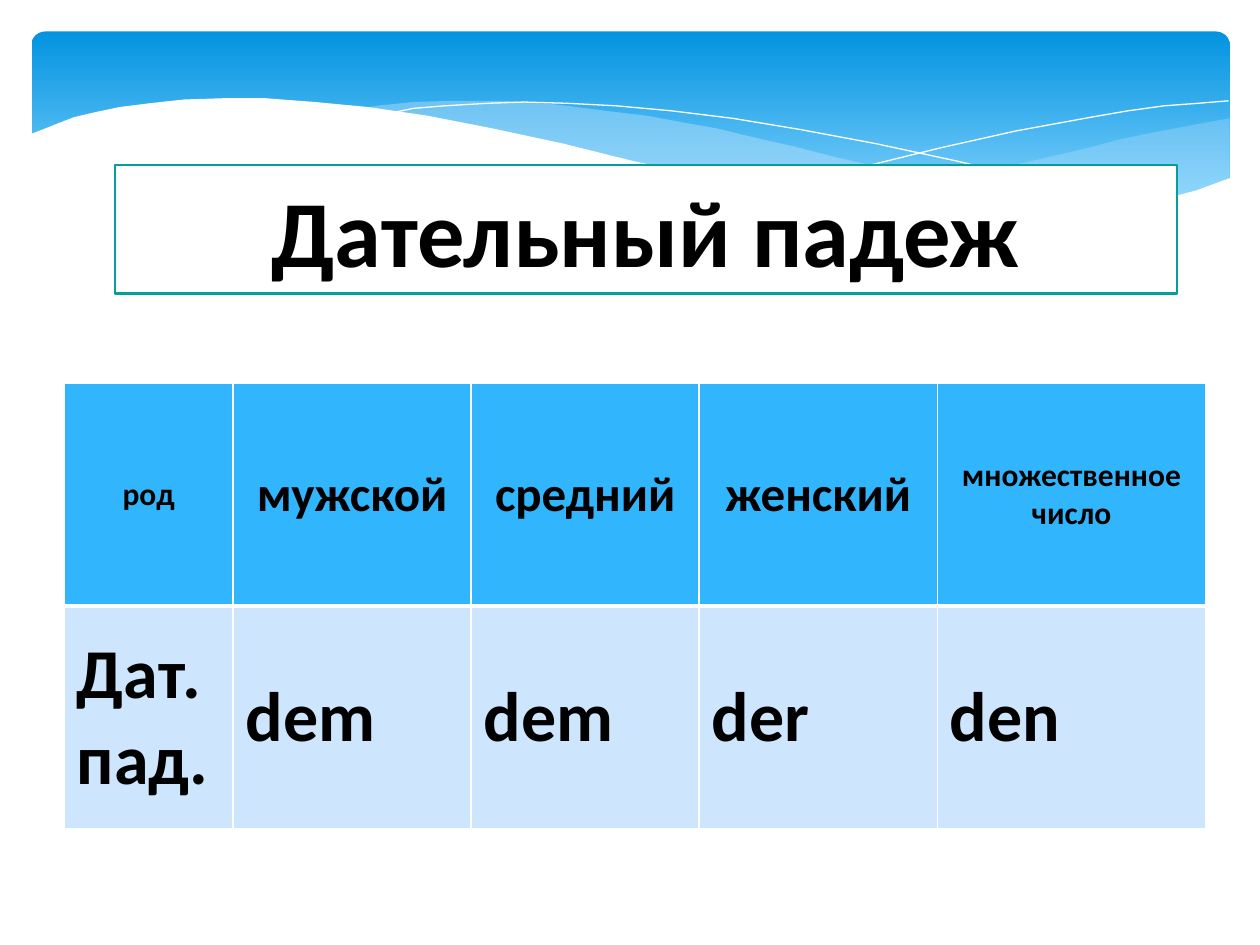
from lxml import etree
from pptx import Presentation
from pptx.dml.color import RGBColor
from pptx.enum.shapes import MSO_SHAPE
from pptx.enum.text import MSO_ANCHOR, PP_ALIGN
from pptx.oxml.ns import qn
from pptx.util import Pt

PX = 9144  # 100 px to the inch
FONT = "Calibri"
ROUND = MSO_SHAPE.ROUNDED_RECTANGLE
MIDDLE = MSO_ANCHOR.MIDDLE
LEFT, CENTER = PP_ALIGN.LEFT, PP_ALIGN.CENTER

WHITE = RGBColor(0xFF, 0xFF, 0xFF)
BLACK = RGBColor(0, 0, 0)
DEEP = RGBColor(0x02, 0x93, 0xE0)
SKY = RGBColor(0x83, 0xD3, 0xFE)
MIST = RGBColor(0xC6, 0xE7, 0xFC)
TEAL = RGBColor(0x04, 0x9E, 0x9B)
BLUE = RGBColor(0x31, 0xB6, 0xFD)
PALE = RGBColor(0xCE, 0xE5, 0xFE)

# Content
TITLE = "Дательный падеж"
HEAD = [("род", 18), ("мужской", 28), ("средний", 28), ("женский", 28),
        ("множественное число", 18)]
BODY = [(word, 40) for word in ("Дат. пад.", "dem", "dem", "der", "den")]
COLS = [134, 189, 181, 189, 213]
ROW = 177

# Waves: points, fill, opacity in percent; without a fill it is an open line
WAVES = [
    ([(975, 94), (948, 99), (921, 104), (891, 110), (861, 118), (805, 131),
      (753, 143), (706, 152), (661, 160), (691, 164), (719, 167), (745, 169),
      (769, 171), (792, 172), (824, 172), (844, 171), (863, 170), (881, 167),
      (897, 165), (913, 162), (928, 158), (942, 154), (963, 147), (976, 141),
      (976, 94)], MIST, 29),
    ([(893, 167), (866, 164), (807, 154), (741, 142), (668, 126), (629, 116),
      (598, 109), (569, 102), (541, 97), (514, 92), (489, 89), (442, 83),
      (399, 80), (361, 80), (328, 81), (299, 84), (286, 86), (323, 90),
      (362, 97), (404, 106), (449, 116), (530, 135), (584, 146), (618, 153),
      (650, 158), (680, 163), (709, 166), (736, 169), (773, 172), (807, 173),
      (838, 172), (867, 170)], MIST, 40),
    ([(309, 90), (328, 86), (353, 84), (387, 82), (416, 81), (450, 82),
      (489, 84), (533, 88), (582, 94), (636, 103), (695, 114), (760, 128),
      (831, 145), (869, 155), (907, 166)], None, 100),
    ([(613, 151), (653, 141), (695, 130), (748, 117), (806, 104), (866, 93),
      (895, 88), (924, 84), (951, 82), (975, 80)], None, 100),
    ([(977, 141), (950, 151), (920, 159), (887, 166), (850, 170), (809, 171),
      (761, 170), (726, 167), (688, 162), (648, 156), (603, 149), (555, 139),
      (503, 128), (447, 114), (391, 102), (340, 92), (292, 85), (250, 81),
      (211, 78), (177, 78), (146, 79), (119, 82), (95, 85), (76, 89),
      (59, 93), (46, 98), (36, 102), (23, 107), (23, 224), (977, 224)],
     WHITE, 100),
]


def style(para, size, align):
    para.alignment = align
    for run in para.runs:
        font = run.font
        font.name, font.size, font.bold = FONT, Pt(size), True
        font.color.rgb = BLACK


def wave(shapes, points, color, alpha):
    pen = shapes.build_freeform(*points[0], scale=PX)
    pen.add_line_segments(points[1:], close=color is not None)
    shape = pen.convert_to_shape()
    shape.shadow.inherit = False
    if color is None:
        shape.fill.background()
        shape.line.color.rgb = WHITE
        shape.line.width = 0
        return
    shape.fill.solid()
    shape.fill.fore_color.rgb = color
    shape.line.fill.background()
    if alpha < 100:
        tone = next(shape.fill._xPr.iter(qn("a:srgbClr")))
        etree.SubElement(tone, qn("a:alpha"), val=str(alpha * 1000))


def border(cell, widths):
    props = cell._tc.get_or_add_tcPr()
    for spot, (side, width) in enumerate(zip("LRTB", widths)):
        line = etree.Element(qn("a:ln" + side), w=str(Pt(width)))
        fill = etree.SubElement(line, qn("a:solidFill"))
        etree.SubElement(fill, qn("a:srgbClr"), val=str(WHITE))
        props.insert(spot, line)


def main():
    deck = Presentation()
    deck.slide_width, deck.slide_height = 1000 * PX, 750 * PX
    slide = deck.slides.add_slide(deck.slide_layouts[5])
    shapes = slide.shapes

    # Banner
    band = shapes.add_shape(ROUND, 25 * PX, 25 * PX, 951 * PX, 156 * PX)
    band.adjustments[0] = 0.07
    band.shadow.inherit = False
    band.line.fill.background()
    band.fill.gradient()
    band.fill.gradient_angle = 270
    for stop, color, place in zip(band.fill.gradient_stops, (DEEP, SKY), (0, 0.9)):
        stop.color.rgb, stop.position = color, place
    for points, color, alpha in WAVES:
        wave(shapes, points, color, alpha)

    # Title, brought in front of the banner
    title = shapes.title
    title._element.getparent().append(title._element)
    title.left, title.top = 91 * PX, 131 * PX
    title.width, title.height = 843 * PX, 102 * PX
    title.fill.solid()
    title.fill.fore_color.rgb = WHITE
    title.line.color.rgb = TEAL
    title.line.width = Pt(1.25)
    title.text_frame.text = TITLE
    title.text_frame.vertical_anchor = MIDDLE
    style(title.text_frame.paragraphs[0], 54, CENTER)

    # Table
    rows = [(HEAD, BLUE, CENTER, (1, 1, 1, 3)), (BODY, PALE, LEFT, (1, 1, 3, 1))]
    table = shapes.add_table(len(rows), len(COLS), 51 * PX, 304 * PX,
                             sum(COLS) * PX, len(rows) * ROW * PX).table
    for col, width in zip(table.columns, COLS):
        col.width = width * PX
    for r, (words, color, align, widths) in enumerate(rows):
        table.rows[r].height = ROW * PX
        for c, (word, size) in enumerate(words):
            cell = table.cell(r, c)
            cell.text_frame.text = word
            cell.vertical_anchor = MIDDLE
            cell.fill.solid()
            cell.fill.fore_color.rgb = color
            border(cell, widths)
            style(cell.text_frame.paragraphs[0], size, align)

    deck.save("out.pptx")


if __name__ == "__main__":
    main()
